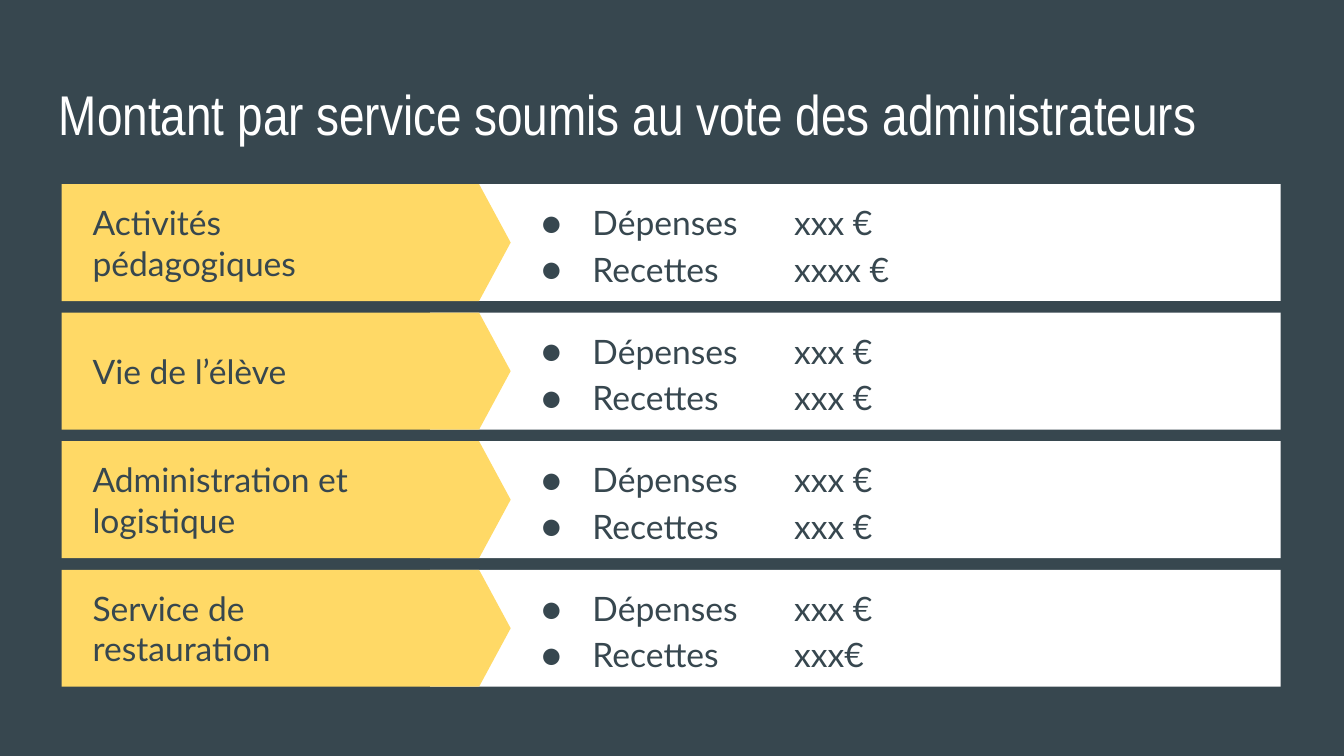
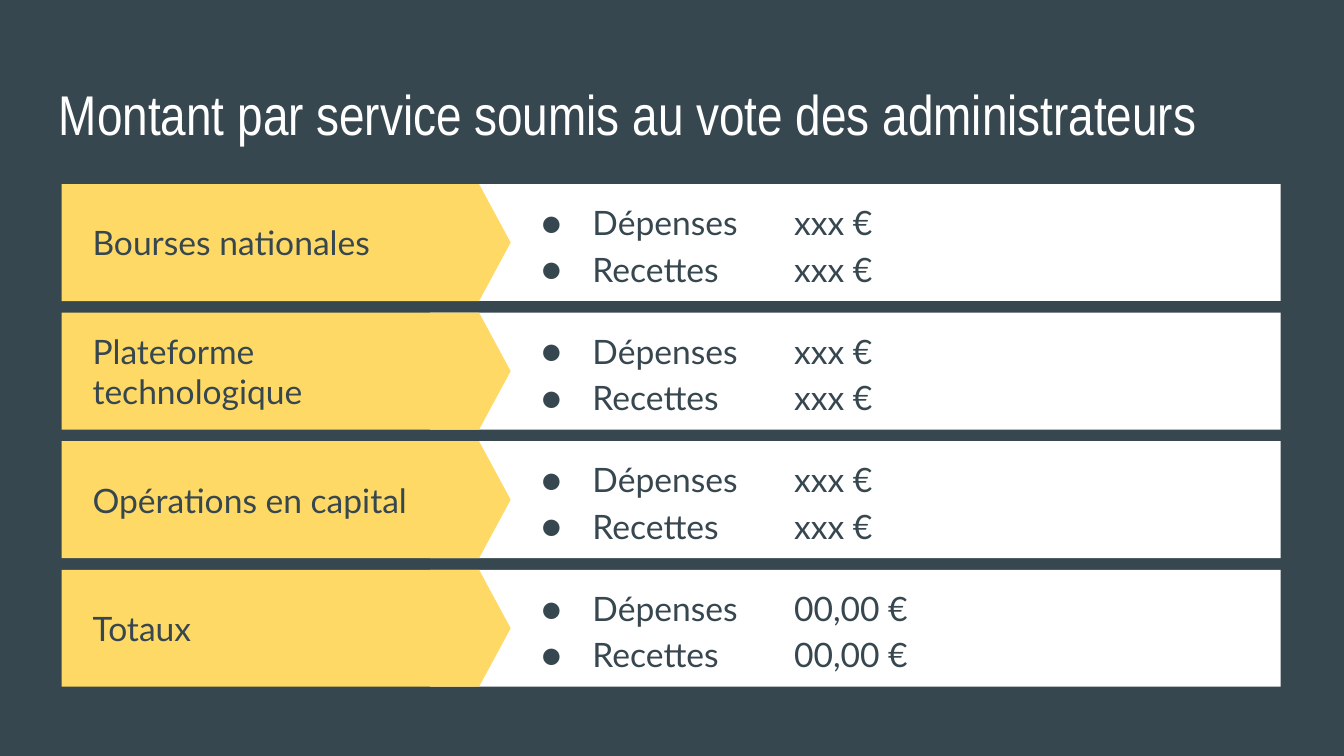
"""Build two slides listing expenses and receipts for each service."""
from lxml.etree import SubElement
from pptx import Presentation
from pptx.dml.color import RGBColor
from pptx.enum.shapes import MSO_SHAPE
from pptx.enum.text import MSO_ANCHOR
from pptx.oxml.ns import qn
from pptx.util import Inches, Pt

TITLE = "Montant par service soumis au vote des administrateurs"
ENTRIES = ("Dépenses", "Recettes")
SLIDES = [
    [
        ("Activités pédagogiques", ("xxx €", "xxxx €")),
        ("Vie de l’élève", ("xxx €", "xxx €")),
        ("Administration et logistique", ("xxx €", "xxx €")),
        ("Service de restauration", ("xxx €", "xxx€")),
    ],
    [
        ("Bourses nationales", ("xxx €", "xxx €")),
        ("Plateforme technologique", ("xxx €", "xxx €")),
        ("Opérations en capital", ("xxx €", "xxx €")),
        ("Totaux", ("00,00 €", "00,00 €")),
    ],
]

COLORS = {"slate": "37474F", "yellow": "FFD966", "white": "FFFFFF"}
TITLE_FONT, BODY_FONT = "Arial Narrow", "Lato"
SLIDE_WIDTH = 10
SLIDE_HEIGHT = SLIDE_WIDTH * 9 / 16
TITLE_BOX = (0.34, 0.49, 9.32, 0.63)
ROW_TOP, ROW_BOTTOM, ROW_HEIGHT = 1.37, 5.11, 0.87
PANEL, ARROW = (3.2, 6.33), (0.46, 3.34)
LABEL, AMOUNTS = (0.59, 2.65), (3.81, 5.59)
ARROW_POINT = 0.27
INSET = 0.1
BULLET_INDENT, BULLET_HANG, TAB_WIDTH = 0.5, 0.38, 1


def color(name):
    return RGBColor.from_string(COLORS[name])


def add_text(slide, box, lines, font_name, size, color_name, anchor=MSO_ANCHOR.MIDDLE):
    frame = slide.shapes.add_textbox(*map(Inches, box)).text_frame
    frame.word_wrap = True
    frame.vertical_anchor = anchor
    frame.margin_left = frame.margin_right = Inches(INSET)
    frame.margin_top = frame.margin_bottom = Inches(INSET)
    frame.text = "\n".join(lines)
    for paragraph in frame.paragraphs:
        paragraph.font.name = font_name
        paragraph.font.size = Pt(size)
        paragraph.font.color.rgb = color(color_name)
    return frame


def add_bullet(paragraph):
    paragraph.line_spacing = 1.15
    properties = paragraph._p.get_or_add_pPr()
    properties.set("marL", str(Inches(BULLET_INDENT)))
    properties.set("indent", str(-Inches(BULLET_HANG)))
    properties.set("defTabSz", str(Inches(TAB_WIDTH)))
    bullet_color = SubElement(properties, qn("a:buClr"))
    SubElement(bullet_color, qn("a:srgbClr"), val=COLORS["slate"])
    SubElement(properties, qn("a:buSzPts"), val="1800")
    SubElement(properties, qn("a:buFont"), typeface=BODY_FONT)
    SubElement(properties, qn("a:buChar"), char="●")
    properties.append(properties.find(qn("a:defRPr")))


def add_band(group, kind, box, color_name):
    shape = group.shapes.add_shape(kind, *map(Inches, box))
    shape.shadow.inherit = False
    shape.fill.solid()
    shape.fill.fore_color.rgb = color(color_name)
    shape.line.fill.background()
    return shape


def add_row(slide, top, label, amounts):
    def row_box(column):
        left, width = column
        return left, top, width, ROW_HEIGHT

    group = slide.shapes.add_group_shape()
    add_band(group, MSO_SHAPE.RECTANGLE, row_box(PANEL), "white")
    arrow = add_band(group, MSO_SHAPE.PENTAGON, row_box(ARROW), "yellow")
    arrow.adjustments[0] = ARROW_POINT

    add_text(slide, row_box(LABEL), [label], BODY_FONT, 18, "slate")
    lines = [f"{entry}\t{amount}" for entry, amount in zip(ENTRIES, amounts)]
    frame = add_text(slide, row_box(AMOUNTS), lines, BODY_FONT, 18, "slate")
    for paragraph in frame.paragraphs:
        add_bullet(paragraph)


def add_service_slide(presentation, services):
    slide = presentation.slides.add_slide(presentation.slide_layouts[6])
    slide.background.fill.solid()
    slide.background.fill.fore_color.rgb = color("slate")
    add_text(slide, TITLE_BOX, [TITLE], TITLE_FONT, 30, "white", MSO_ANCHOR.TOP)
    pitch = (ROW_BOTTOM - ROW_HEIGHT - ROW_TOP) / (len(services) - 1)
    for index, (label, amounts) in enumerate(services):
        add_row(slide, ROW_TOP + index * pitch, label, amounts)


def main():
    presentation = Presentation()
    presentation.slide_width = Inches(SLIDE_WIDTH)
    presentation.slide_height = Inches(SLIDE_HEIGHT)
    for services in SLIDES:
        add_service_slide(presentation, services)
    presentation.save("out.pptx")


if __name__ == "__main__":
    main()
